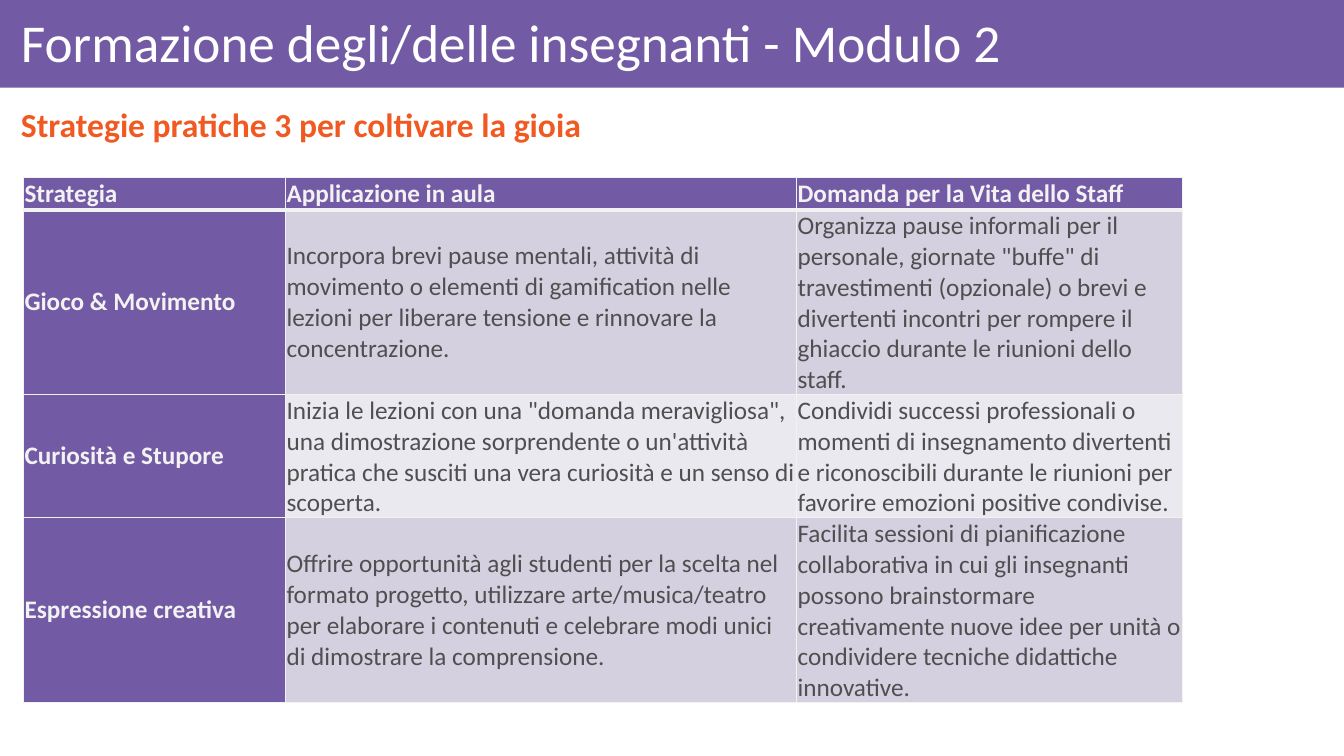
from lxml import etree
from pptx import Presentation
from pptx.dml.color import RGBColor
from pptx.enum.shapes import MSO_SHAPE
from pptx.enum.text import MSO_ANCHOR
from pptx.oxml.ns import qn
from pptx.util import Pt

PURPLE = RGBColor(0x73, 0x5A, 0xA5)
ORANGE = RGBColor(0xF0, 0x5A, 0x22)
WHITE = RGBColor(0xFF, 0xFF, 0xFF)
OFF_WHITE = RGBColor(0xF2, 0xF2, 0xF2)
GREY = RGBColor(0x4F, 0x4F, 0x50)
LILAC = RGBColor(0xD4, 0xD0, 0xE0)
PALE_LILAC = RGBColor(0xEB, 0xE9, 0xF0)

COLUMN_WIDTHS = [187.2, 365.04, 275.76]
ROW_HEIGHTS = [22, 132, 88, 132]
ROWS = [
    ["Strategia", "Applicazione in aula", "Domanda per la Vita dello Staff"],
    [
        "Gioco & Movimento",
        "Incorpora brevi pause mentali, attività di movimento o elementi di gamification nelle lezioni per liberare tensione e rinnovare la concentrazione.",
        'Organizza pause informali per il personale, giornate "buffe" di travestimenti (opzionale) o brevi e divertenti incontri per rompere il ghiaccio durante le riunioni dello staff.',
    ],
    [
        "Curiosità e Stupore",
        "Inizia le lezioni con una \"domanda meravigliosa\", una dimostrazione sorprendente o un'attività pratica che susciti una vera curiosità e un senso di scoperta.",
        "Condividi successi professionali o momenti di insegnamento divertenti e riconoscibili durante le riunioni per favorire emozioni positive condivise.",
    ],
    [
        "Espressione creativa",
        "Offrire opportunità agli studenti per la scelta nel formato progetto, utilizzare arte/musica/teatro per elaborare i contenuti e celebrare modi unici di dimostrare la comprensione.",
        "Facilita sessioni di pianificazione collaborativa in cui gli insegnanti possono brainstormare creativamente nuove idee per unità o condividere tecniche didattiche innovative.",
    ],
]


def style_paragraph(paragraph, text, size, color, bold):
    paragraph.text = text
    font = paragraph.font
    font.name = "Calibri"
    font.size = Pt(size)
    font.bold = bold
    font.color.rgb = color


def set_borders(cell, widths):
    properties = cell._tc.get_or_add_tcPr()
    for position, (side, width) in enumerate(widths.items()):
        line = etree.Element(qn(f"a:ln{side}"), w=str(Pt(width)))
        fill = etree.SubElement(line, qn("a:solidFill"))
        etree.SubElement(fill, qn("a:srgbClr"), val=str(OFF_WHITE))
        properties.insert(position, line)


presentation = Presentation()
presentation.slide_width = Pt(960)
presentation.slide_height = Pt(540)
slide = presentation.slides.add_slide(presentation.slide_layouts[6])

banner = slide.shapes.add_shape(MSO_SHAPE.RECTANGLE, 0, 0, Pt(960), Pt(62.64))
banner.shadow.inherit = False
banner.fill.solid()
banner.fill.fore_color.rgb = PURPLE
banner.line.fill.background()

headings = [
    ("Strategie pratiche 3 per coltivare la gioia", 66.96, 43.2, 24, ORANGE, True),
    ("Formazione degli/delle insegnanti - Modulo 2", 1.44, 56.16, 38, WHITE, False),
]
for text, top, height, size, color, bold in headings:
    heading = slide.shapes.add_textbox(Pt(7.92), Pt(top), Pt(940.32), Pt(height))
    frame = heading.text_frame
    frame.word_wrap = True
    frame.vertical_anchor = MSO_ANCHOR.MIDDLE
    style_paragraph(frame.paragraphs[0], text, size, color, bold)

table = slide.shapes.add_table(
    len(ROWS), len(COLUMN_WIDTHS), Pt(16.8), Pt(126.9),
    Pt(sum(COLUMN_WIDTHS)), Pt(sum(ROW_HEIGHTS)),
).table
table.first_col = True
for column, width in zip(table.columns, COLUMN_WIDTHS):
    column.width = Pt(width)

for row_index, (texts, height) in enumerate(zip(ROWS, ROW_HEIGHTS)):
    table.rows[row_index].height = Pt(height)
    for column_index, text in enumerate(texts):
        cell = table.cell(row_index, column_index)
        is_header = row_index == 0 or column_index == 0
        band = LILAC if row_index % 2 else PALE_LILAC
        cell.fill.solid()
        cell.fill.fore_color.rgb = PURPLE if is_header else band
        cell.vertical_anchor = MSO_ANCHOR.MIDDLE
        cell.margin_left = cell.margin_right = Pt(0.72)
        cell.margin_top = cell.margin_bottom = Pt(0.72)
        color = OFF_WHITE if is_header else GREY
        style_paragraph(cell.text_frame.paragraphs[0], text, 18, color, is_header)
        top = 3 if row_index == 1 else 1
        bottom = 3 if row_index == 0 else 1
        set_borders(cell, {"L": 1, "R": 1, "T": top, "B": bottom})

presentation.save("out.pptx")
